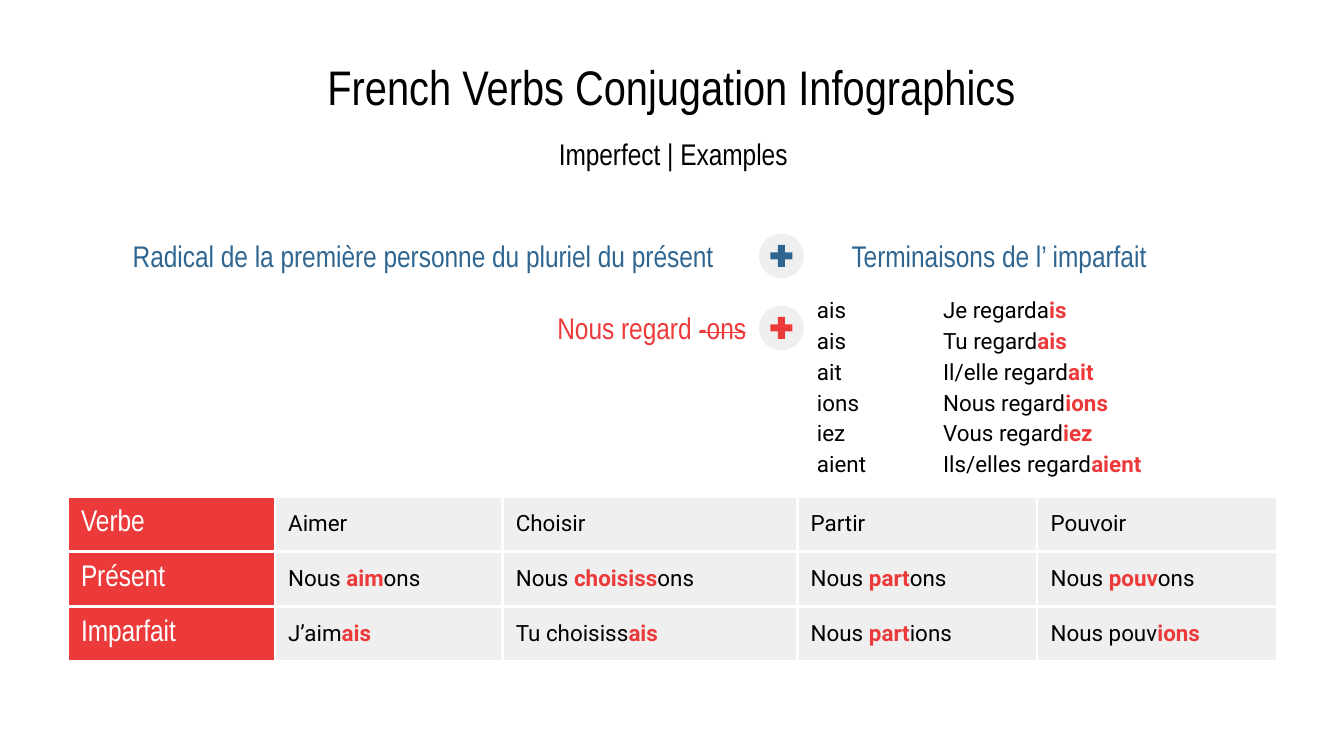
"""Build a slide on how the French imperfect is formed."""
from lxml import etree
from pptx import Presentation
from pptx.dml.color import RGBColor
from pptx.enum.shapes import MSO_SHAPE
from pptx.enum.text import MSO_ANCHOR, MSO_AUTO_SIZE, PP_ALIGN
from pptx.oxml.ns import qn
from pptx.util import Pt

OVAL, PLUS = MSO_SHAPE.OVAL, MSO_SHAPE.MATH_PLUS
TOP, MID, LOW = MSO_ANCHOR.TOP, MSO_ANCHOR.MIDDLE, MSO_ANCHOR.BOTTOM
LEFT, CENTER, RIGHT = PP_ALIGN.LEFT, PP_ALIGN.CENTER, PP_ALIGN.RIGHT
NOFIT = MSO_AUTO_SIZE.NONE

COLORS = {"black": "000000", "white": "FFFFFF", "gray": "EFEFEF",
          "red": "EC3A3B", "blue": "2F6691"}
HEAD = {"name": "Arial Narrow", "size": Pt(16), "bold": False}
TITLE = {**HEAD, "size": Pt(26)}
BODY = {"name": "Roboto", "size": Pt(12), "bold": False}
STRONG = {**BODY, "bold": True}
INSETS = {"margin_left": Pt(7.2), "margin_right": Pt(7.2),
          "margin_top": Pt(7.2), "margin_bottom": Pt(7.2)}

ENDINGS = ["ais", "ais", "ait", "ions", "iez", "aient"]
FORMS = ["Je regarda*is*", "Tu regard*ais*", "Il/elle regard*ait*",
         "Nous regard*ions*", "Vous regard*iez*", "Ils/elles regard*aient*"]
VERBS = [
    ["Verbe", "Aimer", "Choisir", "Partir", "Pouvoir"],
    ["Présent", "Nous *aim*ons", "Nous *choisiss*ons", "Nous *part*ons",
     "Nous *pouv*ons"],
    ["Imparfait", "J’aim*ais*", "Tu choisiss*ais*", "Nous *part*ions",
     "Nous pouv*ions*"],
]
WIDTHS = [111, 122, 158, 128.5, 128.5]
ROW = 29.5


def rgb(color):
    """Return the named colour."""
    return RGBColor.from_string(COLORS[color])


def apply(target, values):
    """Set each format value on the target."""
    for key, value in values.items():
        setattr(target, key, value)


def add_run(para, text, style, color):
    """Add a styled run to a paragraph."""
    run = para.add_run()
    run.text = text
    apply(run.font, style)
    run.font.color.rgb = rgb(color)
    return run


def add_mixed(para, text, style=BODY, color="black"):
    """Add text in which the parts between asterisks are bold and red."""
    for i, part in enumerate(text.split("*")):
        if part and i % 2:
            add_run(para, part, STRONG, "red")
        elif part:
            add_run(para, part, style, color)


def set_frame(shape, box, anchor):
    """Place a text shape and format its frame."""
    apply(shape, dict(zip(("left", "top", "width", "height"), map(Pt, box))))
    frame = shape.text_frame
    apply(frame, {**INSETS, "word_wrap": True, "auto_size": NOFIT,
                  "vertical_anchor": anchor})
    return frame


def add_label(slide, box, text, color, align):
    """Add a one-line heading and return its paragraph."""
    frame = set_frame(slide.shapes.add_textbox(0, 0, 0, 0), box, MID)
    para = frame.paragraphs[0]
    para.alignment = align
    add_run(para, text, HEAD, color)
    return para


def add_list(slide, box, lines):
    """Add a column of short lines."""
    frame = set_frame(slide.shapes.add_textbox(0, 0, 0, 0), box, TOP)
    for i, line in enumerate(lines):
        para = frame.add_paragraph() if i else frame.paragraphs[0]
        para.line_spacing = 1.15
        add_mixed(para, line)


def add_plus(slide, left, top, color):
    """Add a plus sign on a gray disc."""
    group = slide.shapes.add_group_shape()
    for kind, gap, size, fill in ((OVAL, 0, 24, "gray"), (PLUS, 4, 16, color)):
        shape = group.shapes.add_shape(
            kind, Pt(left + gap), Pt(top + gap), Pt(size), Pt(size))
        shape.shadow.inherit = False
        shape.fill.solid()
        shape.fill.fore_color.rgb = rgb(fill)
        shape.line.fill.background()
        if kind == PLUS:
            shape.adjustments[0] = 0.235


def set_edges(cell):
    """Give a cell white borders."""
    props = cell._tc.get_or_add_tcPr()
    for side in ("a:lnL", "a:lnR", "a:lnT", "a:lnB"):
        line = etree.SubElement(props, qn(side), w=str(Pt(1.5)))
        fill = etree.SubElement(line, qn("a:solidFill"))
        etree.SubElement(fill, qn("a:srgbClr"), val=COLORS["white"])


def add_grid(slide, left, top):
    """Add the table of verbs."""
    grid = slide.shapes.add_table(
        len(VERBS), len(WIDTHS), Pt(left), Pt(top), Pt(sum(WIDTHS)),
        Pt(ROW * len(VERBS))).table
    for col, width in zip(grid.columns, WIDTHS):
        col.width = Pt(width)
    for r, texts in enumerate(VERBS):
        grid.rows[r].height = Pt(ROW)
        for c, text in enumerate(texts):
            cell = grid.cell(r, c)
            set_edges(cell)
            apply(cell, {**INSETS, "vertical_anchor": MID})
            cell.fill.solid()
            cell.fill.fore_color.rgb = rgb("gray" if c else "red")
            look = (BODY, "black") if c else (HEAD, "white")
            add_mixed(cell.text_frame.paragraphs[0], text, *look)


def main():
    """Build and save the slide."""
    deck = Presentation()
    deck.slide_width, deck.slide_height = Pt(720), Pt(405)
    slide = deck.slides.add_slide(deck.slide_layouts[5])

    frame = set_frame(slide.shapes.title, (36, 32.4, 648, 36.7), LOW)
    para = frame.paragraphs[0]
    para.alignment = CENTER
    add_run(para, "French Verbs Conjugation Infographics", TITLE, "black")

    add_label(slide, (163.4, 69.1, 394.6, 26.6), "Imperfect | Examples",
              "black", CENTER)
    add_label(slide, (64, 123.8, 342.8, 26.6),
              "Radical de la première personne du pluriel du présent",
              "blue", LEFT)
    add_label(slide, (430.6, 123.8, 190.8, 26.6),
              "Terminaisons de l’ imparfait", "blue", RIGHT)
    stem = add_label(slide, (205.5, 162.2, 201.3, 26.6), "Nous regard ",
                     "red", RIGHT)
    cut = add_run(stem, "-ons", HEAD, "red")
    cut._r.get_or_add_rPr().set("strike", "sngStrike")

    add_plus(slide, 406.6, 125.1, "blue")
    add_plus(slide, 406.6, 163.7, "red")
    add_list(slide, (430.6, 149.2, 67.7, 110), ENDINGS)
    add_list(slide, (498.2, 149.2, 123.2, 110), FORMS)
    add_grid(slide, 36.2, 265.9)
    deck.save("out.pptx")


if __name__ == "__main__":
    main()
